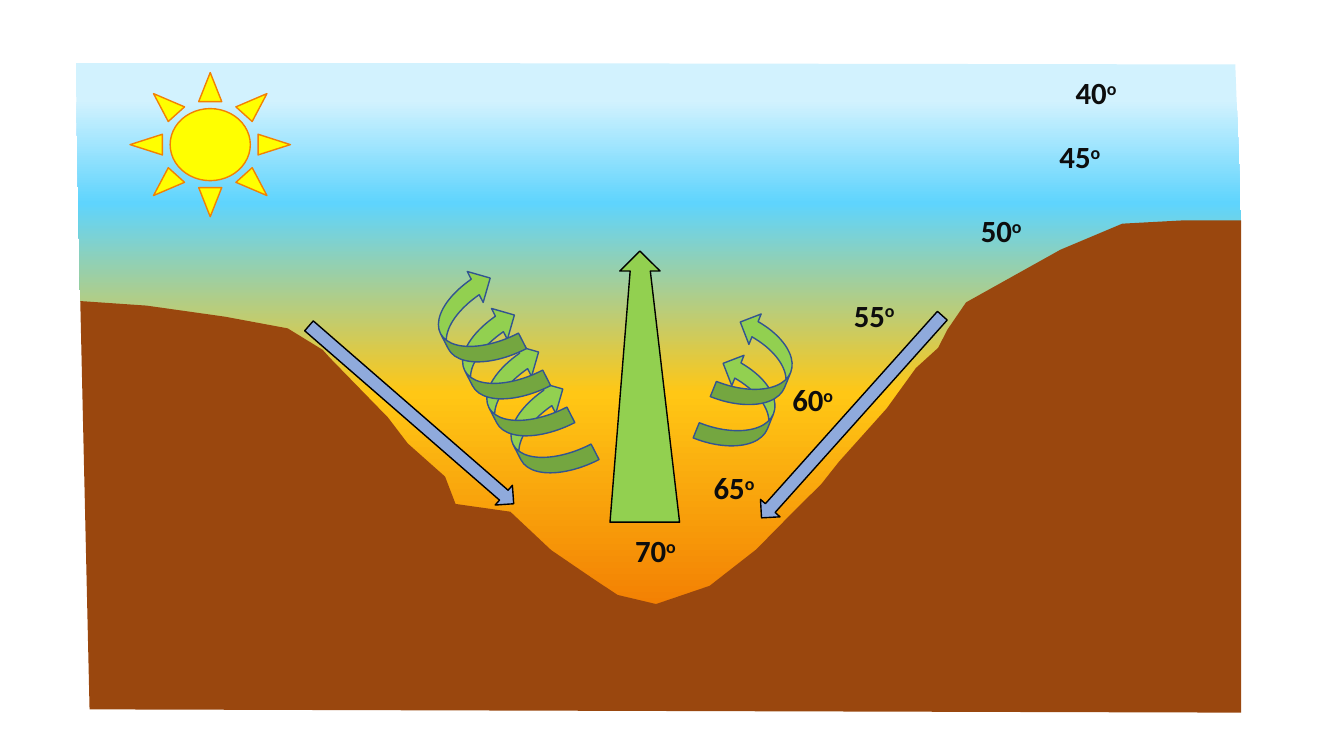
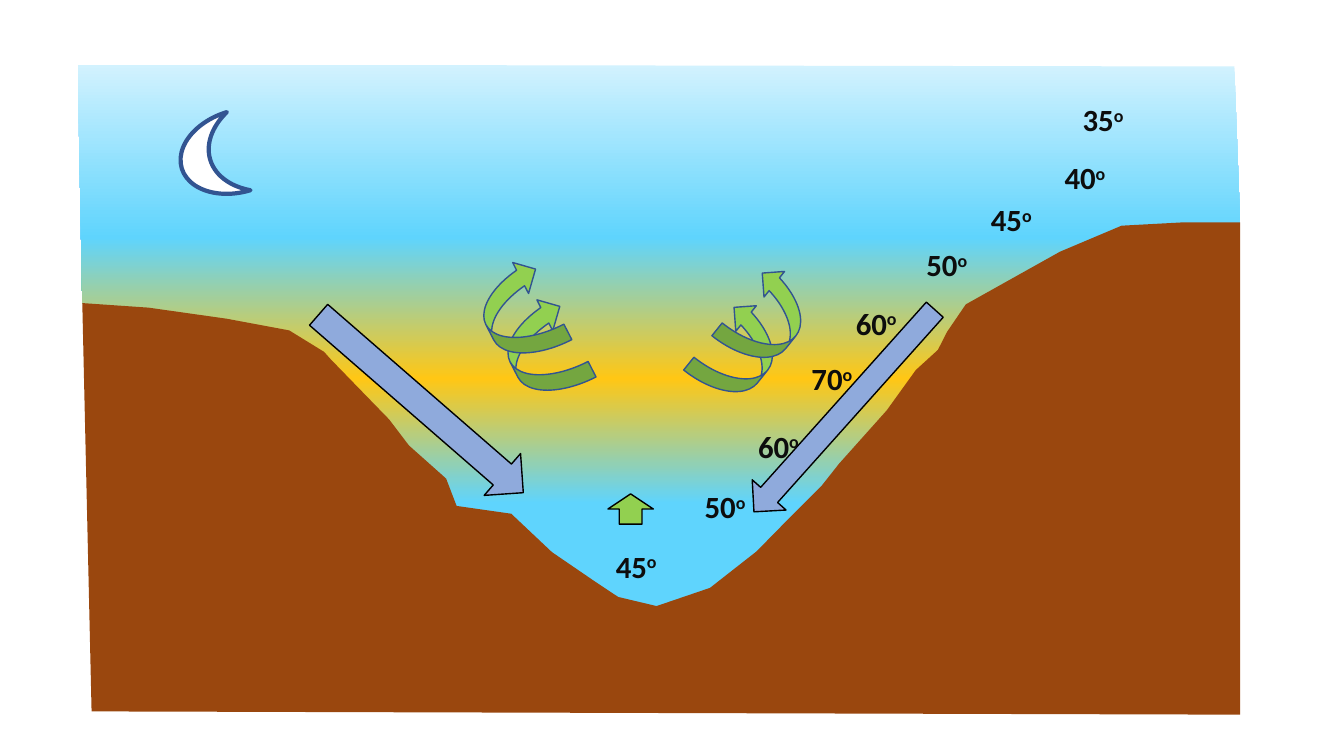
from collections import namedtuple

from lxml.etree import SubElement
from pptx import Presentation
from pptx.dml.color import RGBColor
from pptx.enum.shapes import MSO_SHAPE
from pptx.oxml.ns import qn
from pptx.util import Inches, Pt

GRID = Inches(0.1)
PALE_SKY = RGBColor(0xD2, 0xF2, 0xFE)
SKY = RGBColor(0x5F, 0xD4, 0xFD)
WARM = RGBColor(0xFF, 0xC7, 0x15)
HOT = RGBColor(0xF3, 0x81, 0x03)
EARTH = RGBColor(0x9A, 0x47, 0x0E)
INK = RGBColor(0x0D, 0x0D, 0x0D)
BLACK = RGBColor(0, 0, 0)
WHITE = RGBColor(0xFF, 0xFF, 0xFF)
YELLOW = RGBColor(0xFF, 0xFF, 0)
COLD_AIR = RGBColor(0x8F, 0xAA, 0xDC)
RISING_AIR = RGBColor(0x92, 0xD0, 0x50)
NAVY = RGBColor(0x32, 0x54, 0x91)

Box = namedtuple("Box", "left top width height")

RIDGE = [
    (100, 24.3), (94.9, 24.3), (89.8, 24.8), (84.5, 28.8), (80, 33.3),
    (76.4, 36.9), (74.8, 41.1), (74, 43.9), (72.1, 47), (69.6, 53.2),
    (65.5, 61.4), (64, 64.8), (61.2, 69.8), (58.4, 74.9), (54.4, 80.5),
    (49.8, 83.3), (46.5, 81.9), (44.4, 79.4), (40.8, 75), (37.3, 69.1),
    (32.6, 67.9), (31.7, 63.7), (28.5, 58.6), (26.8, 54.6), (21.8, 45.4),
    (21.2, 44.2), (18.2, 40.9), (12.8, 39.1), (6.1, 37.4), (0.4, 36.7),
]
SKY_EDGE = [(0, 0), (99.5, 0.3)]
GROUND_EDGE = [(1.2, 99.5), (100, 100)]
PLUME = [(43, 0), (72, 7.4), (58, 7.4), (100, 100), (0, 100), (29, 7.4), (14, 7.4)]


def inside(scene, left, top, width, height):
    """Turn columns and rows of the scene into a box on the slide."""
    return Box(scene.left + left, scene.top + top, width, height)


def paint(shape, fill=None, line=None, weight=1):
    """Apply fill and outline without a shadow."""
    shape.shadow.inherit = False
    if fill is not None:
        shape.fill.solid()
        shape.fill.fore_color.rgb = fill
    if line is None:
        shape.line.fill.background()
    else:
        shape.line.color.rgb = line
        shape.line.width = Pt(weight)


def add_outline(slide, box, shares):
    """Draw a closed outline from percentages of its box."""
    points = [(GRID * (box.left + box.width * x / 100),
               GRID * (box.top + box.height * y / 100)) for x, y in shares]
    builder = slide.shapes.build_freeform(*points[0])
    builder.add_line_segments(points[1:], close=True)
    return builder.convert_to_shape()


def add_preset(slide, kind, box, rotation=0, flip=False, **look):
    """Draw a preset shape in its box."""
    shape = slide.shapes.add_shape(kind, *(round(GRID * size) for size in box))
    shape.rotation = rotation
    if flip:
        shape._element.spPr.find(qn("a:xfrm")).set("flipH", "1")
    paint(shape, **look)


def add_degrees(slide, box, value, size=22, color=INK, font="Calibri", bold=True):
    """Write a temperature with a raised degree mark."""
    frame = slide.shapes.add_textbox(*(round(GRID * part) for part in box)).text_frame
    frame.word_wrap = True
    paragraph = frame.paragraphs[0]
    for text in (str(value), "o"):
        run = paragraph.add_run()
        run.text = text
        run.font.size = Pt(size)
        run.font.name = font
        run.font.bold = bold
        run.font.color.rgb = color
    run.font._element.set("baseline", "30000")


def add_valley(slide, scene, stops):
    """Draw the layered air and the ground below it."""
    air = add_outline(slide, scene, SKY_EDGE + RIDGE)
    paint(air)
    air.fill.gradient()
    air.fill.gradient_angle = 270
    stop_list = air._element.spPr.find(qn("a:gradFill")).find(qn("a:gsLst"))
    for old in list(stop_list):
        stop_list.remove(old)
    for position, color in stops:
        stop = SubElement(stop_list, qn("a:gs"), pos=str(position * 1000))
        SubElement(stop, qn("a:srgbClr"), val=str(color))
    paint(add_outline(slide, scene, GROUND_EDGE + RIDGE), fill=EARTH)


def add_slope_winds(slide, scene, winds):
    """Draw cold air flowing down the slopes."""
    for left, top, width, rotation in winds:
        add_preset(slide, MSO_SHAPE.DOWN_ARROW, inside(scene, left, top, width, 26.9),
                   rotation, fill=COLD_AIR, line=BLACK)


def add_eddies(slide, scene, start, step, count, width, rotation, flip=False):
    """Stack curled arrows at equal steps, from the bottom up."""
    for index in range(count):
        left, top = (first + index * gap for first, gap in zip(start, step))
        add_preset(slide, MSO_SHAPE.CURVED_LEFT_ARROW,
                   inside(scene, left, top, width, 9.6), rotation, flip,
                   fill=RISING_AIR, line=NAVY)


def add_temperatures(slide, scene, readings):
    """Write the temperatures from the valley floor upwards."""
    for value, left, top in readings:
        add_degrees(slide, inside(scene, left, top, 15.6, 4.7), value)


def build_day(slide):
    """Build the valley in sunlight."""
    scene = Box(7.5, 6.2, 115.6, 64.5)
    add_valley(slide, scene, [(7, PALE_SKY), (26, SKY), (61, WARM), (100, HOT)])
    add_preset(slide, MSO_SHAPE.SUN, inside(scene, 5.4, 1, 15.9, 14.3),
               fill=YELLOW, line=HOT)
    add_slope_winds(slide, scene, [(32, 21.5, 2.6, 311), (75.7, 21.7, 2.6, 41.8)])
    plume = add_outline(slide, inside(scene, 53, 18.7, 6.9, 26.9), PLUME)
    paint(plume, fill=RISING_AIR, line=BLACK)
    add_eddies(slide, scene, (43.2, 31.9), (-2.4, -3.67), 4, 6.9, 152.8)
    add_eddies(slide, scene, (62.8, 29.2), (1.7, -4.1), 2, 6.5, 201.9, flip=True)
    add_temperatures(slide, scene, [
        (70, 54.5, 46.1), (65, 62.3, 39.8), (60, 70.1, 31.1), (55, 76.2, 22.7),
        (50, 88.8, 14.3), (45, 96.6, 7), (40, 98.2, 0.6)])


def build_night(slide):
    """Build the valley under the moon."""
    scene = Box(7.7, 6.4, 115.3, 64.5)
    add_valley(slide, scene, [(0, PALE_SKY), (32, SKY), (58, WARM), (81, SKY)])
    add_preset(slide, MSO_SHAPE.UP_ARROW, inside(scene, 52.6, 42.6, 4.5, 3),
               fill=RISING_AIR, line=BLACK)
    add_slope_winds(slide, scene, [(31.3, 20.2, 5.5, 311), (73.8, 20.9, 4.5, 41.8)])
    add_preset(slide, MSO_SHAPE.MOON, inside(scene, 10.2, 5.4, 5.9, 8.1), 343.2,
               fill=WHITE, line=NAVY, weight=3)
    add_eddies(slide, scene, (42.7, 23.5), (-2.4, -3.7), 2, 6.9, 152.8)
    add_eddies(slide, scene, (62.4, 23.8), (2.8, -3.4), 2, 6.5, 218.8, flip=True)
    add_temperatures(slide, scene, [
        (45, 52.4, 47.4), (50, 61.2, 41.5), (60, 66.5, 35.5), (70, 71.8, 28.8),
        (60, 76.2, 23.3), (50, 83.2, 17.5), (45, 89.6, 13), (40, 96.9, 8.9),
        (35, 98.7, 3.1)])


def main():
    """Build and save both slides."""
    deck = Presentation()
    deck.slide_width = Inches(13.33)
    deck.slide_height = Inches(7.5)
    for build in (build_day, build_night):
        build(deck.slides.add_slide(deck.slide_layouts[6]))
    deck.save("out.pptx")


if __name__ == "__main__":
    main()
